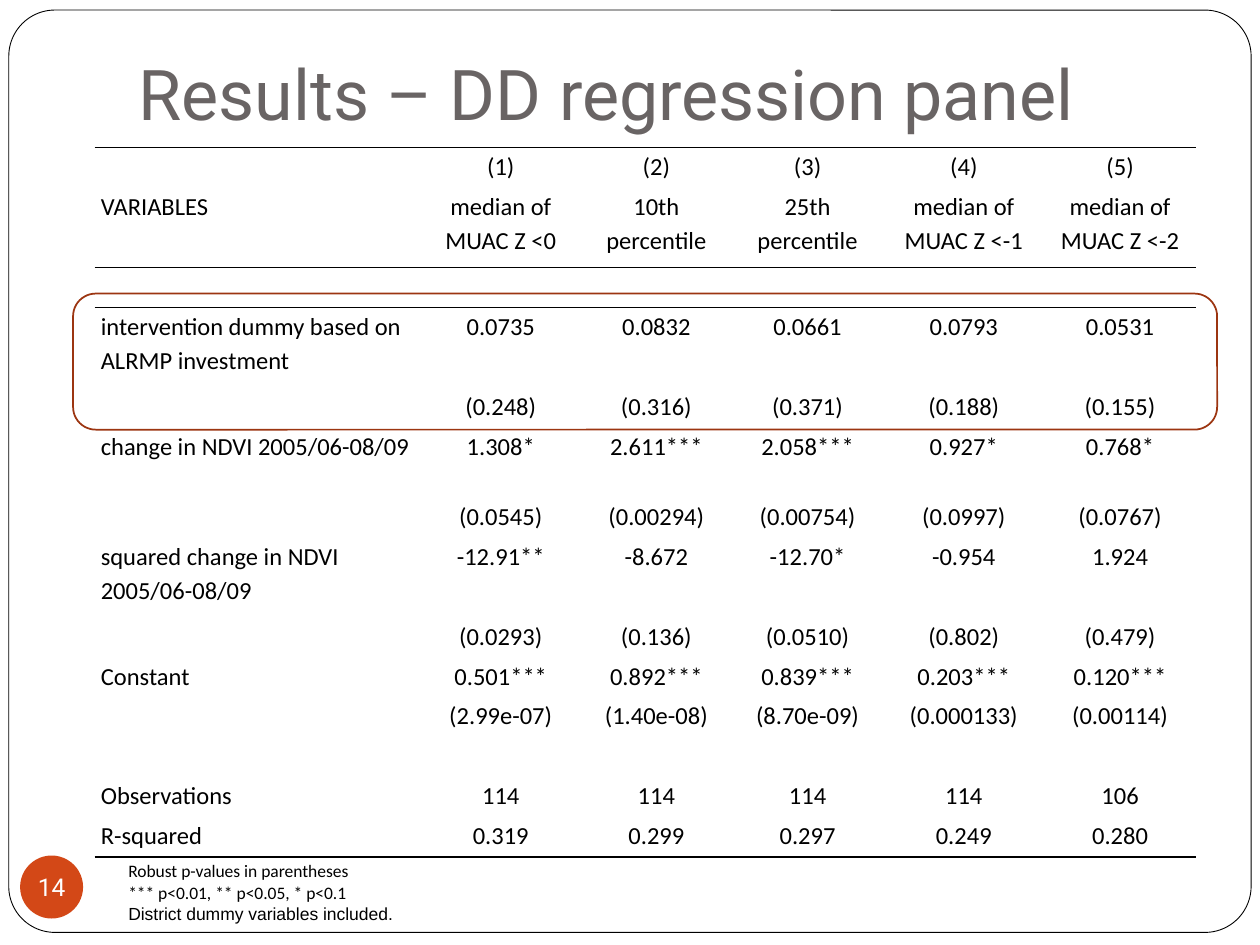
import dataclasses

import lxml.etree
import pptx
import pptx.dml.color
import pptx.enum.shapes
import pptx.enum.text
import pptx.oxml.ns
import pptx.util

Inches = pptx.util.Inches
Pt = pptx.util.Pt
Align = pptx.enum.text.PP_ALIGN
Anchor = pptx.enum.text.MSO_ANCHOR
Shape = pptx.enum.shapes.MSO_SHAPE


@dataclasses.dataclass(frozen=True)
class Theme:
    black: str = "000000"
    white: str = "FFFFFF"
    title: str = "696464"
    accent: str = "D34817"
    highlight: str = "9C3511"
    heading_font: str = "Roboto"
    table_font: str = "Calibri"
    note_font: str = "Arial"
    title_size: int = 40
    body_size: int = 14
    note_size: int = 10


THEME = Theme()
NO_STYLE = "{2D5ABB26-0587-4C30-8999-92F81FD0307C}"
COLUMN_WIDTHS = (2.59, 1.27, 1.2, 1.2, 1.28, 1.2)
ROW_HEIGHT = 22.86
ROW_SPANS = (1, 2, 1, 2, 1, 1.75, 1, 2, 1, 1, 1, 1, 1, 1)
BLANK = ("",) * len(COLUMN_WIDTHS)
RESULTS = (
    ("", "(1)", "(2)", "(3)", "(4)", "(5)"),
    ("VARIABLES", "median of MUAC Z <0", "10th percentile", "25th percentile",
     "median of MUAC Z <-1", "median of MUAC Z <-2"),
    BLANK,
    ("intervention dummy based on ALRMP investment", "0.0735", "0.0832", "0.0661", "0.0793", "0.0531"),
    ("", "(0.248)", "(0.316)", "(0.371)", "(0.188)", "(0.155)"),
    ("change in NDVI 2005/06-08/09", "1.308*", "2.611***", "2.058***", "0.927*", "0.768*"),
    ("", "(0.0545)", "(0.00294)", "(0.00754)", "(0.0997)", "(0.0767)"),
    ("squared change in NDVI 2005/06-08/09", "-12.91**", "-8.672", "-12.70*", "-0.954", "1.924"),
    ("", "(0.0293)", "(0.136)", "(0.0510)", "(0.802)", "(0.479)"),
    ("Constant", "0.501***", "0.892***", "0.839***", "0.203***", "0.120***"),
    ("", "(2.99e-07)", "(1.40e-08)", "(8.70e-09)", "(0.000133)", "(0.00114)"),
    BLANK,
    ("Observations", "114", "114", "114", "114", "106"),
    ("R-squared", "0.319", "0.299", "0.297", "0.249", "0.280"),
)
RULES = {0: "T", 1: "B", 2: "T", 13: "B"}


def color(value):
    return pptx.dml.color.RGBColor.from_string(value)


def write(para, text, *, size, font, fill=THEME.black, align=Align.LEFT, spacing=None, after=None):
    para.alignment = align
    if spacing:
        para.line_spacing = spacing
    if after:
        para.space_after = Pt(after)
    if text:
        span = para.add_run()
        span.text = text
        span.font.size = Pt(size)
        span.font.name = font
        span.font.color.rgb = color(fill)
    else:
        para._p.get_or_add_endParaRPr().set("sz", str(size * 100))


def set_frame(frame, anchor, margins, wrap=True):
    frame.margin_left, frame.margin_top, frame.margin_right, frame.margin_bottom = map(Inches, margins)
    frame.vertical_anchor = anchor
    frame.auto_size = pptx.enum.text.MSO_AUTO_SIZE.NONE
    frame.word_wrap = wrap


def add_shape(page, kind, bounds, *, fill=None, line=None, width=1, radius=None):
    shape = page.shapes.add_shape(kind, *map(Inches, bounds))
    shape.shadow.inherit = False
    if radius is not None:
        shape.adjustments[0] = radius
    if fill:
        shape.fill.solid()
        shape.fill.fore_color.rgb = color(fill)
    else:
        shape.fill.background()
    if line:
        shape.line.color.rgb = color(line)
        shape.line.width = Pt(width)
    else:
        shape.line.fill.background()
    return shape


def add_title(page, text):
    title = page.shapes.title
    title.left, title.top, title.width, title.height = map(Inches, (1, 0.3, 8.5, 0.87))
    set_frame(title.text_frame, Anchor.BOTTOM, (0.1, 0.05, 0.1, 0.1))
    write(title.text_frame.paragraphs[0], text,
          size=THEME.title_size, font=THEME.heading_font, fill=THEME.title)


def add_page_number(page, text):
    badge = add_shape(page, Shape.OVAL, (0.16, 6.79, 0.5, 0.5), fill=THEME.accent)
    set_frame(badge.text_frame, Anchor.MIDDLE, (0, 0, 0, 0), wrap=False)
    write(badge.text_frame.paragraphs[0], text, size=THEME.body_size,
          font=THEME.heading_font, fill=THEME.white, align=Align.CENTER)


def add_rule(cell, side):
    qn = pptx.oxml.ns.qn
    border = lxml.etree.Element(qn(f"a:ln{side}"), w=str(Pt(1)))
    fill = lxml.etree.SubElement(border, qn("a:solidFill"))
    lxml.etree.SubElement(fill, qn("a:srgbClr"), val=THEME.black)
    cell._tc.get_or_add_tcPr().insert(0, border)


def fill_cell(cell, text, align):
    cell.margin_left = cell.margin_right = Inches(0.05)
    cell.margin_top = cell.margin_bottom = 0
    cell.fill.background()
    write(cell.text_frame.paragraphs[0], text, size=THEME.body_size,
          font=THEME.table_font, align=align, spacing=1.15, after=10)


def add_results_table(page):
    holder = page.shapes.add_table(len(RESULTS), len(COLUMN_WIDTHS), Inches(0.75), Inches(1.17),
                                   Inches(sum(COLUMN_WIDTHS)), Pt(ROW_HEIGHT * sum(ROW_SPANS)))
    table = holder.table
    table.first_row = table.horz_banding = False
    table._tbl.tblPr.find(pptx.oxml.ns.qn("a:tableStyleId")).text = NO_STYLE
    for column, width in zip(table.columns, COLUMN_WIDTHS):
        column.width = Inches(width)
    for row_index, (values, row_span) in enumerate(zip(RESULTS, ROW_SPANS)):
        table.rows[row_index].height = Pt(ROW_HEIGHT * row_span)
        for column_index, text in enumerate(values):
            cell = table.cell(row_index, column_index)
            fill_cell(cell, text, Align.CENTER if column_index else Align.LEFT)
            if row_index in RULES:
                add_rule(cell, RULES[row_index])


def add_notes_below_table(page):
    box = page.shapes.add_textbox(*map(Inches, (0.92, 6.83, 10, 0.5)))
    set_frame(box.text_frame, Anchor.MIDDLE, (0.1, 0.05, 0.1, 0.05))
    lines = (
        ("Robust p-values in parentheses", THEME.table_font),
        ("*** p<0.01, ** p<0.05, * p<0.1", THEME.table_font),
        ("District dummy variables included.", THEME.note_font),
    )
    for index, (text, font) in enumerate(lines):
        para = box.text_frame.add_paragraph() if index else box.text_frame.paragraphs[0]
        write(para, text, size=THEME.note_size, font=font)


def main():
    deck = pptx.Presentation()
    deck.slide_width, deck.slide_height = Inches(10), Inches(7.5)
    page = deck.slides.add_slide(deck.slide_layouts[5])
    border = add_shape(page, Shape.ROUNDED_RECTANGLE, (0.07, 0.08, 9.86, 7.32),
                       fill=THEME.white, line=THEME.black, width=0.5, radius=0.05)
    page.shapes.title._element.addprevious(border._element)
    add_title(page, "Results – DD regression panel")
    add_page_number(page, "14")
    add_results_table(page)
    add_notes_below_table(page)
    add_shape(page, Shape.ROUNDED_RECTANGLE, (0.58, 2.33, 9.08, 1.08), line=THEME.highlight)
    deck.save("out.pptx")


if __name__ == "__main__":
    main()
